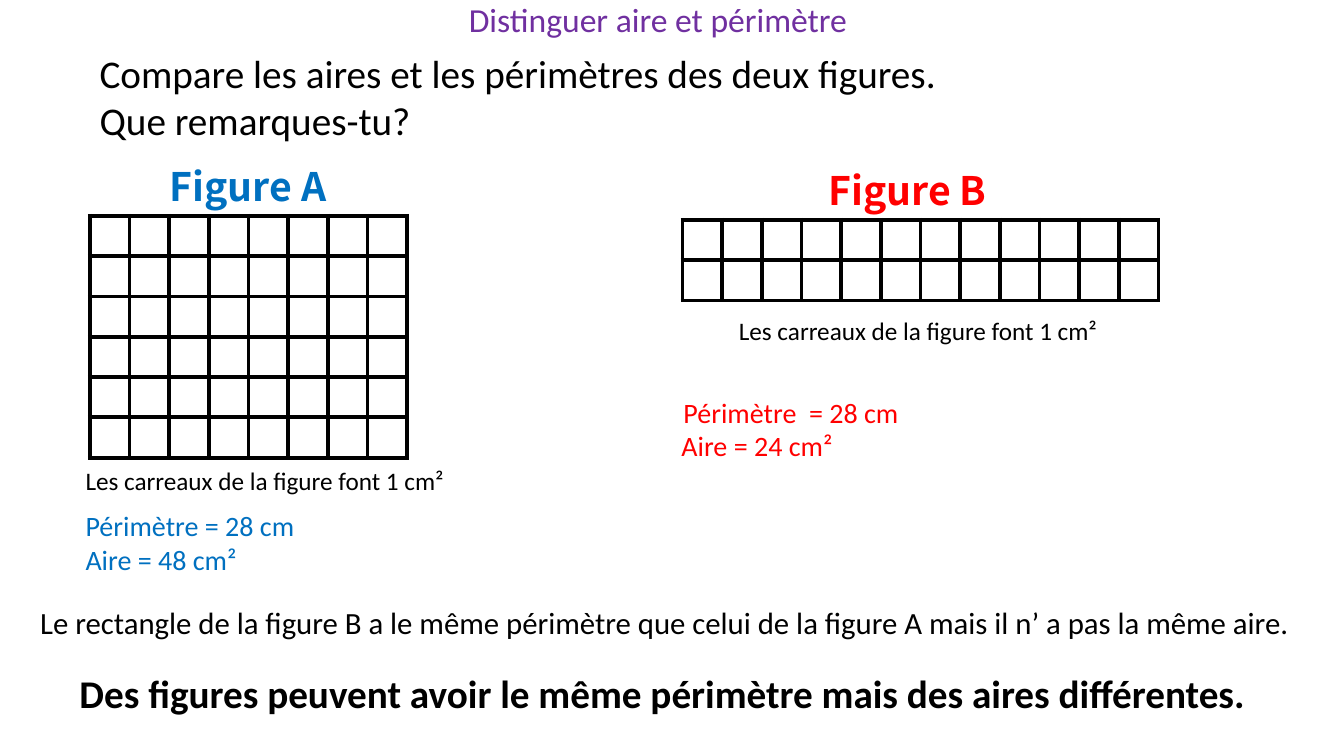
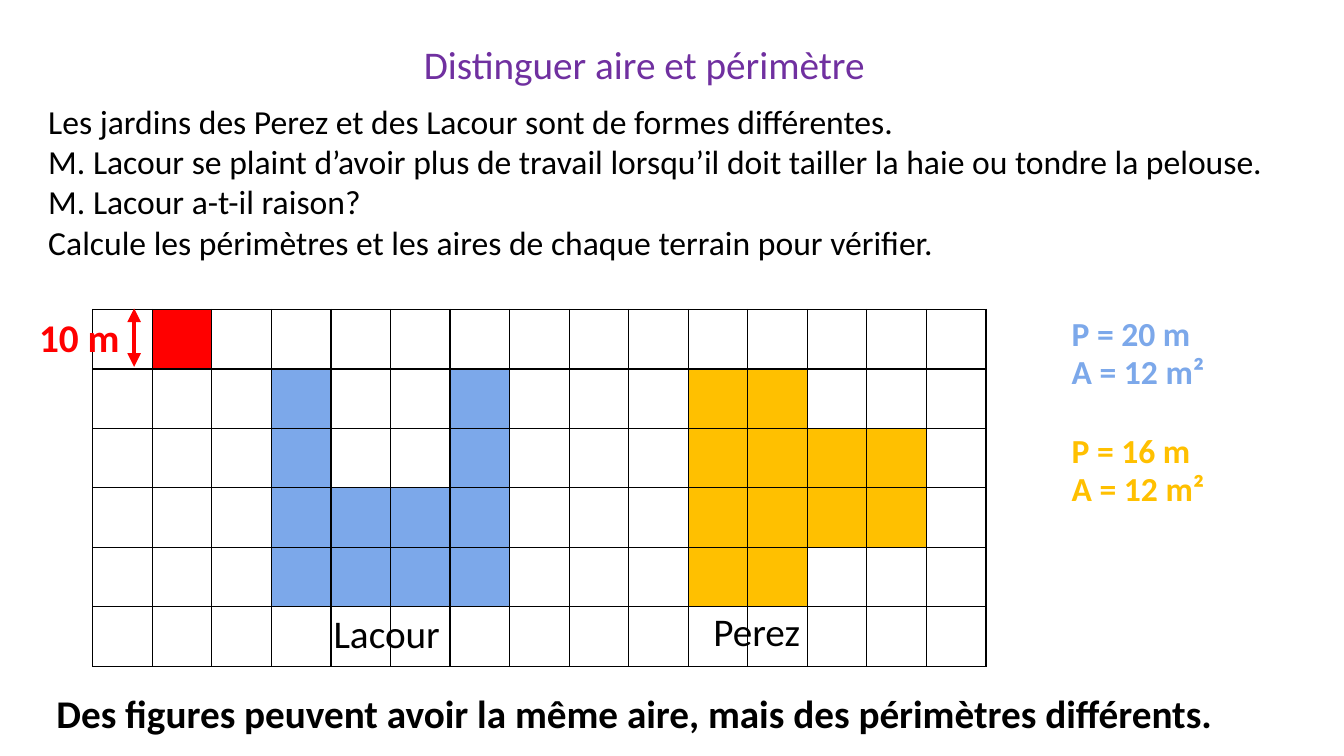
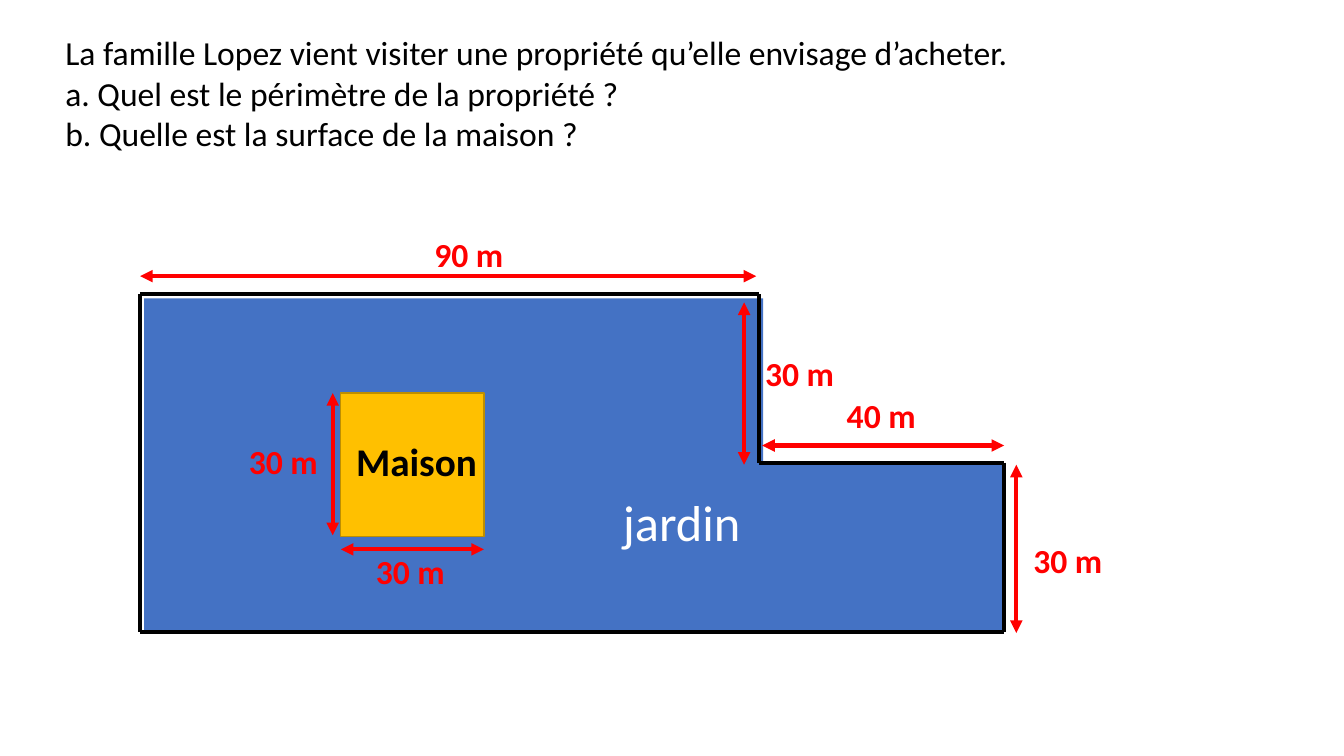
from dataclasses import dataclass
from typing import Any

from lxml import etree
from pptx import Presentation
from pptx import util as u
from pptx.dml import color
from pptx.enum import shapes, text
from pptx.oxml import ns

PX = 9144
FONT = "Calibri"
HEAD = "Noto Sans CJK JP"
TITLE = "Distinguer aire et périmètre"
UNIT = "Les carreaux de la figure font 1 cm²"
HUES = {
    "black": "000000",
    "white": "FFFFFF",
    "red": "FF0000",
    "blue": "0070C0",
    "purple": "7030A0",
    "sky": "7CA8EA",
    "gold": "FFC000",
    "brown": "BD8E00",
    "lawn": "4472C4",
}
CODES = {"R": "red", "L": "sky", "P": "gold"}
LEFT, MID = text.PP_ALIGN.LEFT, text.PP_ALIGN.CENTER


@dataclass(frozen=True)
class Label:
    x: int
    y: int
    w: int
    h: int
    lines: tuple[str, ...]
    size: int = 28
    hue: str = "black"
    bold: bool = False
    align: Any = LEFT
    font: str = FONT


@dataclass(frozen=True)
class Grid:
    x: int
    y: int
    w: int
    h: int
    rows: tuple[str, ...]
    edge: int


@dataclass(frozen=True)
class Line:
    x1: int
    y1: int
    x2: int
    y2: int
    hue: str = "red"
    width: float = 3
    heads: bool = True


@dataclass(frozen=True)
class Box:
    x: int
    y: int
    w: int
    h: int
    fill: str
    edge: str | None = None


def px(count: int) -> u.Emu:
    return u.Emu(count * PX)


def rgb(hue: str) -> color.RGBColor:
    return color.RGBColor.from_string(HUES[hue])


def sub(root: Any, tag: str, **attrs: str) -> Any:
    return etree.SubElement(root, ns.qn(tag), attrs)


def write(shape: Any, label: Label) -> None:
    frame = shape.text_frame
    frame.word_wrap = True
    frame.auto_size = text.MSO_AUTO_SIZE.NONE
    frame.vertical_anchor = text.MSO_ANCHOR.TOP
    for i, line in enumerate(label.lines):
        para = frame.add_paragraph() if i else frame.paragraphs[0]
        para.alignment = label.align
        run = para.add_run()
        run.text = line
        run.font.name = label.font
        run.font.size = u.Pt(label.size)
        run.font.bold = label.bold
        run.font.color.rgb = rgb(label.hue)


def add_label(slide: Any, label: Label) -> None:
    spot = map(px, (label.x, label.y, label.w, label.h))
    write(slide.shapes.add_textbox(*spot), label)


def add_title(slide: Any, label: Label) -> Any:
    title = slide.shapes.title
    title.left, title.top = px(label.x), px(label.y)
    title.width, title.height = px(label.w), px(label.h)
    write(title, label)
    return title.text_frame.paragraphs[0]


def add_grid(slide: Any, grid: Grid) -> None:
    spot = map(px, (grid.x, grid.y, grid.w, grid.h))
    table = slide.shapes.add_table(len(grid.rows), len(grid.rows[0]), *spot).table
    table.first_row = table.horz_banding = False
    for r, row in enumerate(grid.rows):
        for c, code in enumerate(row):
            cell = table.cell(r, c)
            cell.margin_left = cell.margin_right = 0
            cell.margin_top = cell.margin_bottom = 0
            props = cell._tc.get_or_add_tcPr()
            for side in ("a:lnL", "a:lnR", "a:lnT", "a:lnB"):
                edge = sub(props, side, w=str(u.Pt(grid.edge)))
                sub(sub(edge, "a:solidFill"), "a:srgbClr", val=HUES["black"])
            if code in CODES:
                cell.fill.solid()
                cell.fill.fore_color.rgb = rgb(CODES[code])
            else:
                cell.fill.background()


def add_line(slide: Any, line: Line) -> None:
    ends = map(px, (line.x1, line.y1, line.x2, line.y2))
    link = slide.shapes.add_connector(shapes.MSO_CONNECTOR.STRAIGHT, *ends)
    link.line.color.rgb = rgb(line.hue)
    link.line.width = u.Pt(line.width)
    if line.heads:
        stroke = link.line._get_or_add_ln()
        for tag in ("a:headEnd", "a:tailEnd"):
            sub(stroke, tag, type="triangle")
    sub(link._element.spPr, "a:effectLst")


def add_box(slide: Any, box: Box) -> None:
    spot = map(px, (box.x, box.y, box.w, box.h))
    shape = slide.shapes.add_shape(shapes.MSO_SHAPE.RECTANGLE, *spot)
    shape.shadow.inherit = False
    shape.fill.solid()
    shape.fill.fore_color.rgb = rgb(box.fill)
    if box.edge:
        shape.line.color.rgb = rgb(box.edge)
        shape.line.width = u.Pt(1)
    else:
        shape.line.fill.background()


def compare(slide: Any) -> None:
    para = add_title(slide, Label(455, -18, 675, 82, (TITLE,), 24, "purple"))
    para.line_spacing = 1.3
    para.space_before = u.Pt(10)
    add_grid(slide, Grid(89, 214, 315, 240, ("." * 8,) * 6, 3))
    add_grid(slide, Grid(677, 218, 472, 80, ("." * 12,) * 2, 3))
    ask = ("Compare les aires et les périmètres des deux figures.", "Que remarques-tu?")
    same = (
        "Le rectangle de la figure B a le même périmètre que celui "
        "de la figure A mais il n’ a pas la même aire."
    )
    rule = "Des figures peuvent avoir le même périmètre mais des aires différentes."
    for label in (
        Label(89, 44, 867, 104, ask),
        Label(128, 156, 236, 57, ("Figure A",), 28, "blue", True, MID, HEAD),
        Label(782, 160, 236, 57, ("Figure B",), 28, "red", True, MID, HEAD),
        Label(75, 457, 380, 40, (UNIT,), 18),
        Label(723, 308, 380, 40, (UNIT,), 18),
        Label(75, 500, 513, 77, ("Périmètre = 28 cm", "Aire = 48 cm²"), 20, "blue"),
        Label(668, 387, 298, 44, ("Périmètre  = 28 cm",), 20, "red"),
        Label(666, 420, 298, 44, ("Aire = 24 cm²",), 20, "red"),
        Label(30, 594, 1300, 47, (same,), 22),
        Label(69, 659, 1196, 57, (rule,), 28, bold=True),
    ):
        add_label(slide, label)


def gardens(slide: Any) -> None:
    add_title(slide, Label(92, 35, 1094, 57, (TITLE,), 28, "purple", align=MID))
    story = (
        "Les jardins des Perez et des Lacour sont de formes différentes.",
        "M. Lacour se plaint d’avoir plus de travail lorsqu’il doit tailler "
        "la haie ou tondre la pelouse.",
        "M. Lacour a-t-il raison?",
        "Calcule les périmètres et les aires de chaque terrain pour vérifier.",
    )
    plots = (
        ".R.............",
        "...L..L...PP...",
        "...L..L...PPPP.",
        "...LLLL...PPPP.",
        "...LLLL...PP...",
        "...............",
    )
    rule = "Des figures peuvent avoir la même aire, mais des périmètres différents."
    add_grid(slide, Grid(92, 307, 886, 354, plots, 1))
    add_line(slide, Line(133, 306, 133, 364, width=3.25))
    for label in (
        Label(38, 95, 1295, 172, story, 24),
        Label(299, 600, 169, 57, ("Lacour",), align=MID),
        Label(666, 598, 169, 57, ("Perez",), align=MID),
        Label(29, 306, 104, 57, ("10 m",), 28, "red", True),
        Label(29, 679, 1200, 57, (rule,), 28, bold=True, align=MID),
    ):
        add_label(slide, label)
    for y, hue, length in ((306, "sky", "20"), (422, "gold", "16")):
        for i, line in enumerate((f"P = {length} m", "A = 12 m²")):
            add_label(slide, Label(1053, y + 37 * i, 251, 50, (line,), 24, hue, True))


def estate(slide: Any) -> None:
    add_box(slide, Box(144, 459, 850, 167, "lawn"))
    add_box(slide, Box(143, 296, 614, 332, "lawn"))
    bounds = ((139, 292), (753, 292), (753, 459), (996, 459), (996, 627), (139, 627))
    for start, end in zip(bounds, bounds[1:] + bounds[:1]):
        add_line(slide, Line(*start, *end, hue="black", heads=False))
    add_box(slide, Box(338, 390, 142, 142, "gold", "brown"))
    story = (
        "La famille Lopez vient visiter une propriété qu’elle envisage d’acheter.",
        "a. Quel est le périmètre de la propriété ?",
        "b. Quelle est la surface de la maison ?",
    )
    add_label(slide, Label(55, 27, 1030, 172, story, 24))
    add_label(slide, Label(342, 429, 142, 57, ("Maison",), 28, bold=True, align=MID))
    add_label(slide, Label(608, 482, 153, 71, ("jardin",), 36, "white"))
    for ends, spot, size in (
        ((139, 274, 750, 274), (356, 227), "90 m"),
        ((738, 300, 738, 461), (684, 345), "30 m"),
        ((756, 442, 996, 442), (765, 387), "40 m"),
        ((1008, 461, 1008, 628), (950, 531), "30 m"),
        ((338, 545, 480, 545), (298, 542), "30 m"),
        ((330, 390, 330, 531), (172, 433), "30 m"),
    ):
        add_line(slide, Line(*ends))
        add_label(slide, Label(*spot, 218, 50, (size,), 24, "red", True, MID))


def main() -> None:
    deck = Presentation()
    deck.slide_width, deck.slide_height = px(1333), px(750)
    bare, titled = deck.slide_layouts[6], deck.slide_layouts[5]
    for draw, layout in ((compare, titled), (gardens, titled), (estate, bare)):
        draw(deck.slides.add_slide(layout))
    deck.save("out.pptx")


if __name__ == "__main__":
    main()
